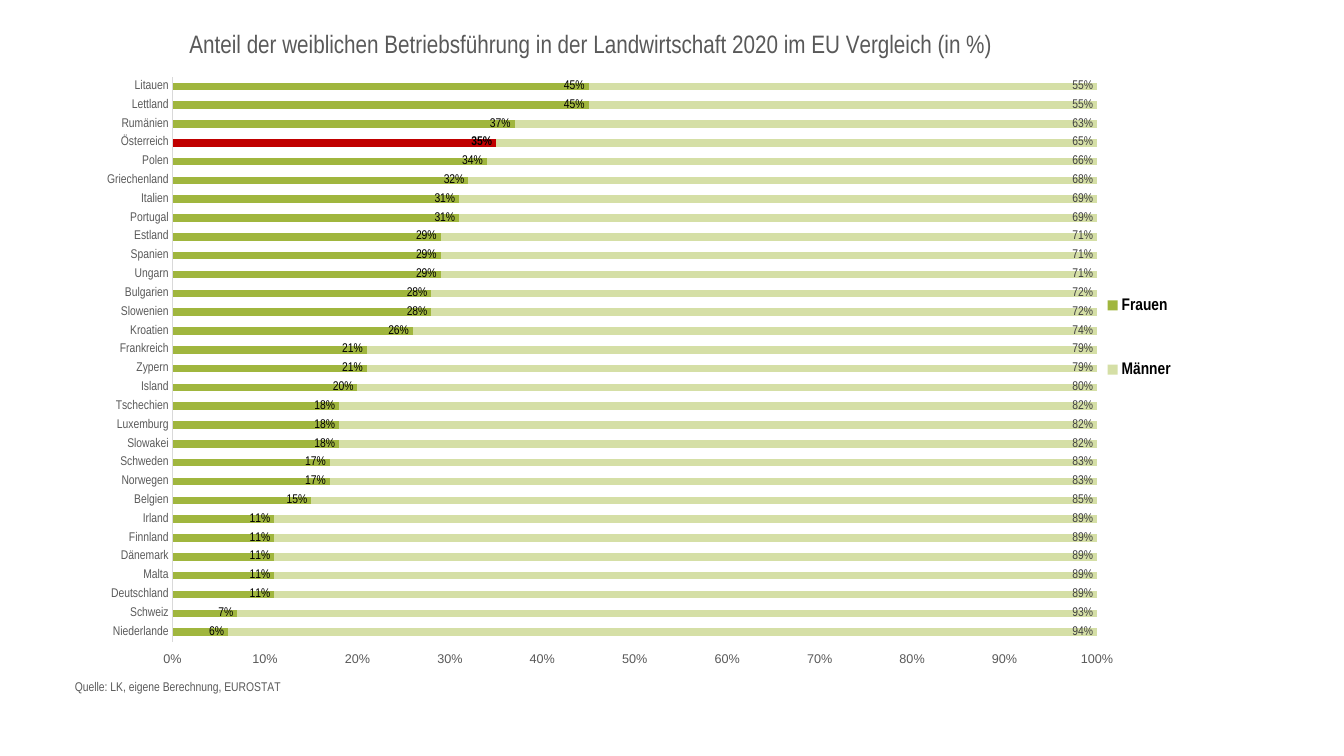
import pptx
import pptx.chart.data
import pptx.dml.color
import pptx.enum.chart
import pptx.oxml
import pptx.oxml.ns
import pptx.util
from pptx.util import Inches

RGBColor = pptx.dml.color.RGBColor
BLACK = RGBColor(0x00, 0x00, 0x00)
DARK_GREY = RGBColor(0x40, 0x40, 0x40)
GREY = RGBColor(0x59, 0x59, 0x59)
LIGHT_GREY = RGBColor(0xD9, 0xD9, 0xD9)
GREEN = RGBColor(0xA0, 0xB6, 0x3E)
PALE_GREEN = RGBColor(0xD5, 0xDF, 0xA6)
RED = RGBColor(0xC0, 0x00, 0x00)
NARROW = "Arial Narrow"
HIGHLIGHT = "Österreich"

# Share of farms led by women, in percent
WOMEN = {
    "Litauen": 45, "Lettland": 45, "Rumänien": 37, "Österreich": 35,
    "Polen": 34, "Griechenland": 32, "Italien": 31, "Portugal": 31,
    "Estland": 29, "Spanien": 29, "Ungarn": 29, "Bulgarien": 28,
    "Slowenien": 28, "Kroatien": 26, "Frankreich": 21, "Zypern": 21,
    "Island": 20, "Tschechien": 18, "Luxemburg": 18, "Slowakei": 18,
    "Schweden": 17, "Norwegen": 17, "Belgien": 15, "Irland": 11,
    "Finnland": 11, "Dänemark": 11, "Malta": 11, "Deutschland": 11,
    "Schweiz": 7, "Niederlande": 6,
}


def set_font(font, size, color, name=NARROW, bold=False):
    font.name = name
    font.size = pptx.util.Pt(size)
    font.bold = bold
    font.color.rgb = color


def set_layout(parent, before, x, y, width=None, height=None, inner=False):
    """Place a chart part by fractions of the chart area."""
    for old in parent.findall(pptx.oxml.ns.qn("c:layout")):
        parent.remove(old)
    parts = [("layoutTarget", "inner")] if inner else []
    parts += [("xMode", "edge"), ("yMode", "edge"), ("x", x), ("y", y)]
    if width:
        parts += [("w", width), ("h", height)]
    body = "".join(f'<c:{tag} val="{value}"/>' for tag, value in parts)
    layout = pptx.oxml.parse_xml(
        f'<c:layout {pptx.oxml.ns.nsdecls("c")}>'
        f"<c:manualLayout>{body}</c:manualLayout></c:layout>")
    if before is None:
        parent.insert(0, layout)
    else:
        parent.find(pptx.oxml.ns.qn(before)).addnext(layout)


def add_title(title, text, size, x, y):
    paragraph = title.text_frame.paragraphs[0]
    paragraph.text = text
    set_font(paragraph.font, size, GREY)
    set_layout(title._element, "c:tx", x, y)


def style_axis(axis, font_name):
    axis.has_major_gridlines = False
    axis.major_tick_mark = pptx.enum.chart.XL_TICK_MARK.NONE
    axis.minor_tick_mark = pptx.enum.chart.XL_TICK_MARK.NONE
    set_font(axis.tick_labels.font, 9, GREY, font_name)


def style_series(series, fill, label_color):
    series.format.fill.solid()
    series.format.fill.fore_color.rgb = fill
    series.invert_if_negative = False
    labels = series.data_labels
    labels.show_value = True
    labels.number_format = "0%"
    labels.number_format_is_linked = False
    labels.position = pptx.enum.chart.XL_LABEL_POSITION.INSIDE_END
    set_font(labels.font, 9, label_color)


def highlight_point(point):
    point.format.fill.solid()
    point.format.fill.fore_color.rgb = RED
    set_font(point.data_label.font, 9, BLACK, bold=True)
    point.data_label.position = pptx.enum.chart.XL_LABEL_POSITION.INSIDE_END


def add_share_chart(page):
    data = pptx.chart.data.CategoryChartData(number_format="0%")
    data.categories = list(WOMEN)
    data.add_series("Frauen", [share / 100 for share in WOMEN.values()])
    data.add_series("Männer", [(100 - share) / 100 for share in WOMEN.values()])
    chart = page.shapes.add_chart(
        pptx.enum.chart.XL_CHART_TYPE.BAR_STACKED,
        Inches(0.72), Inches(0.23), Inches(11.02), Inches(6.75), data).chart
    set_font(chart.font, 10, BLACK, "Arial")

    # Bars
    plot = chart.plots[0]
    plot.gap_width = 150
    plot.overlap = 100
    plot.vary_by_categories = False
    women, men = plot.series
    style_series(women, GREEN, BLACK)
    style_series(men, PALE_GREEN, DARK_GREY)
    highlight_point(women.points[list(WOMEN).index(HIGHLIGHT)])
    set_layout(chart._chartSpace.chart.plotArea, None,
               0.09, 0.079, 0.832, 0.83, inner=True)

    # Axes: with the countries reversed, the high side is the bottom
    countries, shares = chart.category_axis, chart.value_axis
    style_axis(countries, NARROW)
    countries.reverse_order = True
    countries.format.line.color.rgb = LIGHT_GREY
    countries.format.line.width = pptx.util.Pt(0.75)
    style_axis(shares, "Arial")
    shares.tick_label_position = pptx.enum.chart.XL_TICK_LABEL_POSITION.HIGH
    shares.minimum_scale = 0
    shares.maximum_scale = 1
    shares.major_unit = 0.1
    shares.tick_labels.number_format = "0%"
    shares.tick_labels.number_format_is_linked = False
    shares.format.line.fill.background()

    # Title and source line
    chart.has_title = True
    add_title(chart.chart_title,
              "Anteil der weiblichen Betriebsführung in der Landwirtschaft "
              "2020 im EU Vergleich (in %)", 18, 0.101, 0.007)
    chart.chart_title.include_in_layout = False
    shares.has_title = True
    add_title(shares.axis_title,
              "Quelle: LK, eigene Berechnung, EUROSTAT", 9, 0, 0.963)

    # Legend
    chart.has_legend = True
    legend = chart.legend
    legend.position = pptx.enum.chart.XL_LEGEND_POSITION.RIGHT
    legend.include_in_layout = False
    set_font(legend.font, 12, BLACK, bold=True)
    set_layout(legend._element, "c:legendPos", 0.925, 0.332, 0.07, 0.26)


def main():
    deck = pptx.Presentation()
    deck.slide_width = Inches(13.33)
    deck.slide_height = Inches(7.5)
    page = deck.slides.add_slide(deck.slide_layouts[6])
    add_share_chart(page)
    deck.save("out.pptx")


if __name__ == "__main__":
    main()
